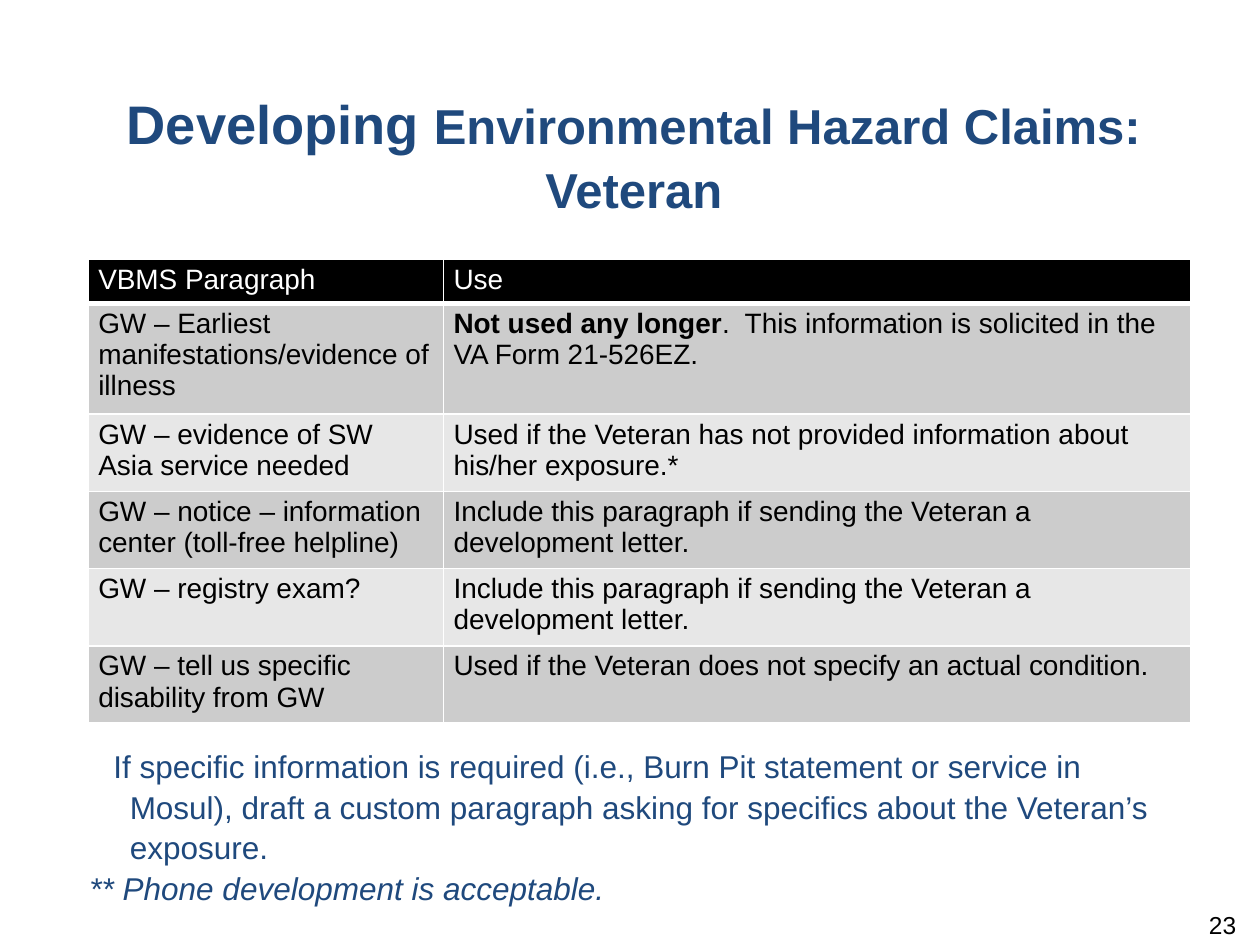
from dataclasses import dataclass

from lxml import etree
from pptx import Presentation
from pptx.dml.color import RGBColor
from pptx.enum.text import MSO_ANCHOR, MSO_AUTO_SIZE, PP_ALIGN
from pptx.oxml.ns import qn
from pptx.util import Inches, Pt

CENTER, LEFT, RIGHT = PP_ALIGN.CENTER, PP_ALIGN.LEFT, PP_ALIGN.RIGHT
TOP, MIDDLE = MSO_ANCHOR.TOP, MSO_ANCHOR.MIDDLE
FIXED, GROW = MSO_AUTO_SIZE.NONE, MSO_AUTO_SIZE.SHAPE_TO_FIT_TEXT
WIDE, HIGH = Inches(10), Inches(7.5)


@dataclass(frozen=True)
class Theme:
    """Colours and type sizes of the slide."""
    font: str = "Arial"
    navy: str = "1F497D"
    black: str = "000000"
    white: str = "FFFFFF"
    bands: tuple = ("CCCCCC", "E7E7E7")
    lead: int = 31
    title: int = 28
    body: int = 18
    cell: int = 16
    page: int = 14
    line: float = 1.07


THEME = Theme()
TITLE = ("Developing ", "Environmental Hazard Claims: Veteran")
NOTES = (
    "If specific information is required (i.e., Burn Pit statement or service in "
    "Mosul), draft a custom paragraph asking for specifics about the Veteran’s exposure.",
    "** Phone development is acceptable.",
)
LETTER = "Include this paragraph if sending the Veteran a development letter."
ROWS = (
    (("VBMS Paragraph",), ("Use",)),
    (("GW – Earliest manifestations/evidence of illness",),
     ("Not used any longer", ".  This information is solicited in the VA Form 21-526EZ.")),
    (("GW – evidence of SW Asia service needed",),
     ("Used if the Veteran has not provided information about his/her exposure.*",)),
    (("GW – notice – information center (toll-free helpline)",), (LETTER,)),
    (("GW – registry exam?",), (LETTER,)),
    (("GW – tell us specific disability from GW",),
     ("Used if the Veteran does not specify an actual condition.",)),
)
COLS = (28.2, 59.3)
TALLS = (4.27, 10.93, 7.6, 8.13, 7.6, 7.6)


def across(share):
    """Turn a percentage of the slide width into a length."""
    return int(WIDE * share / 100)


def down(share):
    """Turn a percentage of the slide height into a length."""
    return int(HIGH * share / 100)


def place(shape, left, top, width, height):
    """Put a shape at percentages of the slide size."""
    shape.left, shape.top = across(left), down(top)
    shape.width, shape.height = across(width), down(height)


def style(run, size, color, bold=False, italic=False):
    """Format one run of text."""
    font = run.font
    font.name, font.size = THEME.font, Pt(size)
    font.bold, font.italic = bold, italic
    font.color.rgb = RGBColor.from_string(color)


def add_title(slide):
    """Fill the title placeholder with a larger first word."""
    shape = slide.shapes.title
    place(shape, 5.6, 8.27, 89.4, 15.73)
    frame = shape.text_frame
    frame.auto_size, frame.vertical_anchor = FIXED, MIDDLE
    para = frame.paragraphs[0]
    para.alignment, para.space_after, para.line_spacing = CENTER, Pt(6), THEME.line
    for text, size in zip(TITLE, (THEME.lead, THEME.title)):
        run = para.add_run()
        run.text = text
        style(run, size, THEME.navy, bold=True)


def add_notes(slide):
    """Fill the body placeholder with the remarks below the table."""
    shape = slide.placeholders[1]
    place(shape, 6.1, 78.13, 88.9, 17.47)
    frame = shape.text_frame
    frame.text = "\n".join(NOTES)
    frame.auto_size, frame.vertical_anchor = GROW, TOP
    indents = ((0.32, -0.13), (0, 0))
    for index, (para, (margin, hang)) in enumerate(zip(frame.paragraphs, indents)):
        props = para._p.get_or_add_pPr()
        props.set("marL", str(Inches(margin)))
        props.set("indent", str(Inches(hang)))
        etree.SubElement(props, qn("a:buNone"))
        para.alignment, para.line_spacing = LEFT, THEME.line
        para.space_before = para.space_after = Pt(0)
        style(para.runs[0], THEME.body, THEME.navy, italic=index == 1)


def add_edges(cell, head):
    """Draw the white borders of a cell."""
    props = cell._tc.get_or_add_tcPr()
    for side in ("L", "R", "T", "B"):
        points = 3 if head and side == "B" else 1
        edge = etree.SubElement(props, qn("a:ln" + side), w=str(Pt(points)))
        fill = etree.SubElement(edge, qn("a:solidFill"))
        etree.SubElement(fill, qn("a:srgbClr"), val=THEME.white)


def fill_cell(cell, parts, row):
    """Set the text, fill and borders of a cell."""
    head = row == 0
    add_edges(cell, head)
    cell.fill.solid()
    shade = THEME.black if head else THEME.bands[(row - 1) % 2]
    cell.fill.fore_color.rgb = RGBColor.from_string(shade)
    cell.margin_left = cell.margin_right = Inches(0.08)
    cell.margin_top = cell.margin_bottom = Inches(0.04)
    para = cell.text_frame.paragraphs[0]
    for index, text in enumerate(parts):
        run = para.add_run()
        run.text = text
        color = THEME.white if head else THEME.black
        style(run, THEME.cell, color, bold=len(parts) > 1 and index == 0)


def add_grid(slide):
    """Add the table of paragraphs and their use."""
    frame = slide.shapes.add_table(
        len(ROWS), len(COLS), across(7), down(27.47), across(87.4), down(48.67))
    table = frame.table
    for column, share in zip(table.columns, COLS):
        column.width = across(share)
    for row, share in zip(table.rows, TALLS):
        row.height = down(share)
    for row, cells in enumerate(ROWS):
        for col, parts in enumerate(cells):
            fill_cell(table.cell(row, col), parts, row)


def add_page(slide):
    """Add the page number at the lower right."""
    box = slide.shapes.add_textbox(0, 0, 0, 0)
    place(box, 75.8, 96.27, 23.3, 5.33)
    frame = box.text_frame
    frame.word_wrap, frame.margin_top = True, 0
    frame.text = "23"
    para = frame.paragraphs[0]
    para.alignment, para.space_after = RIGHT, Pt(6)
    style(para.runs[0], THEME.page, THEME.black)


def main():
    """Build and save the slide."""
    deck = Presentation()
    deck.slide_width, deck.slide_height = WIDE, HIGH
    slide = deck.slides.add_slide(deck.slide_layouts[1])
    add_title(slide)
    add_page(slide)
    add_grid(slide)
    add_notes(slide)
    deck.save("out.pptx")


if __name__ == "__main__":
    main()
